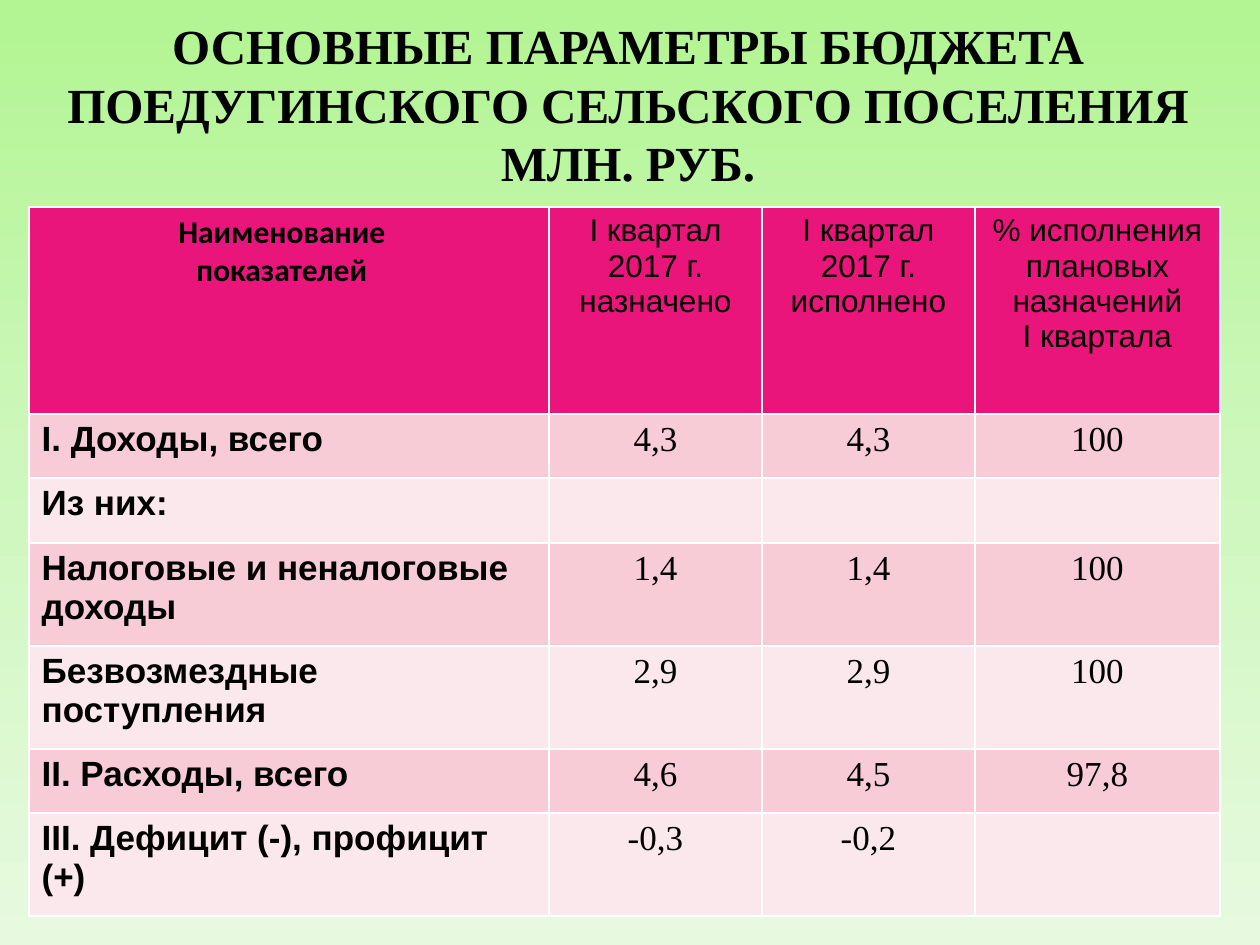
import copy

import pptx
import pptx.dml.color
import pptx.enum.text
import pptx.oxml
import pptx.oxml.ns
import pptx.util

EMU_PER_PX = 914400 / 126
COLORS = {
    "text": "000000", "border": "FFFFFF", "header": "EA157A",
    "odd": "F7CCD7", "even": "FBE8EC",
    "top": "B2F592", "middle": "CEF7BD", "bottom": "E7FADF",
}
ALIGN = pptx.enum.text.PP_ALIGN
ANCHOR = pptx.enum.text.MSO_ANCHOR


def px(length):
    return pptx.util.Emu(round(length * EMU_PER_PX))


def rgb(name):
    return pptx.dml.color.RGBColor.from_string(COLORS[name])


def write(frame, text, font="Arial", size=20, bold=False, align=ALIGN.CENTER):
    """Fill a text frame, one paragraph per line of text."""
    for index, line in enumerate(text.split("\n")):
        para = frame.add_paragraph() if index else frame.paragraphs[0]
        para.alignment = align
        span = para.add_run()
        span.text = line
        span.font.name = font
        span.font.size = pptx.util.Pt(size)
        span.font.bold = bold
        span.font.color.rgb = rgb("text")


class BudgetSlide:
    def __init__(self, deck):
        self.page = deck.slides.add_slide(deck.slide_layouts[5])

    def background(self, *names):
        fill = self.page.background.fill
        fill.gradient()
        fill.gradient_angle = 270
        first = self.page.element.xpath(".//p:bg//a:gs")[0]
        first.addnext(copy.deepcopy(first))
        for index, (stop, name) in enumerate(zip(fill.gradient_stops, names)):
            stop.position = index / (len(names) - 1)
            stop.color.rgb = rgb(name)

    def title(self, text, left, top, width, height):
        box = self.page.shapes.title
        box.left, box.top, box.width, box.height = map(px, (left, top, width, height))
        box.text_frame.word_wrap = True
        box.text_frame.auto_size = pptx.enum.text.MSO_AUTO_SIZE.NONE
        box.text_frame.vertical_anchor = ANCHOR.MIDDLE
        write(box.text_frame, text, font="Times New Roman", size=28, bold=True)

    def table(self, left, top, widths, heights):
        frame = self.page.shapes.add_table(
            len(heights), len(widths), px(left), px(top),
            px(sum(widths)), px(sum(heights)))
        for column, width in zip(frame.table.columns, widths):
            column.width = px(width)
        for row, height in zip(frame.table.rows, heights):
            row.height = px(height)
        return frame.table

    def cell(self, cell, text, color, **style):
        properties = cell._tc.get_or_add_tcPr()
        for side in "LRTB":
            properties.append(pptx.oxml.parse_xml(
                f'<a:ln{side} {pptx.oxml.ns.nsdecls("a")} w="12700"><a:solidFill>'
                f'<a:srgbClr val="{COLORS["border"]}"/></a:solidFill></a:ln{side}>'))
        cell.fill.solid()
        cell.fill.fore_color.rgb = rgb(color)
        cell.vertical_anchor = ANCHOR.TOP
        if text:
            write(cell.text_frame, text, **style)


HEADERS = [
    "Наименование\nпоказателей",
    "I квартал 2017 г. назначено",
    "I квартал 2017 г. исполнено",
    "% исполнения\nплановых назначений\nI квартала",
]
# Label, planned, executed, percent, row height
ROWS = [
    ("I. Доходы, всего", "4,3", "4,3", "100", 64),
    ("Из них:", "", "", "", 65),
    ("Налоговые и неналоговые доходы", "1,4", "1,4", "100", 103),
    ("Безвозмездные поступления", "2,9", "2,9", "100", 103),
    ("II. Расходы, всего", "4,6", "4,5", "97,8", 64),
    ("III. Дефицит (-), профицит (+)", "-0,3", "-0,2", "", 103),
]


def main():
    deck = pptx.Presentation()
    deck.slide_width, deck.slide_height = px(1260), px(945)
    slide = BudgetSlide(deck)
    slide.background("top", "middle", "bottom")
    slide.title("ОСНОВНЫЕ ПАРАМЕТРЫ БЮДЖЕТА ПОЕДУГИНСКОГО СЕЛЬСКОГО ПОСЕЛЕНИЯ "
                "МЛН. РУБ.", 29, 39, 1198, 129)

    # Budget table: header row
    table = slide.table(29, 207, [520, 213, 213, 245],
                        [207] + [row[-1] for row in ROWS])
    for column, text in enumerate(HEADERS):
        slide.cell(table.cell(0, column), text, "header", size=18,
                   font="Arial" if column else "Calibri", bold=column == 0)
    table.cell(0, 0).margin_right = px(27)

    # Budget table: banded body rows
    for number, (label, *values, _) in enumerate(ROWS, start=1):
        color = "odd" if number % 2 else "even"
        slide.cell(table.cell(number, 0), label, color, bold=True, align=ALIGN.LEFT)
        for column, value in enumerate(values, start=1):
            slide.cell(table.cell(number, column), value, color,
                       font="Times New Roman")

    deck.save("out.pptx")


if __name__ == "__main__":
    main()
